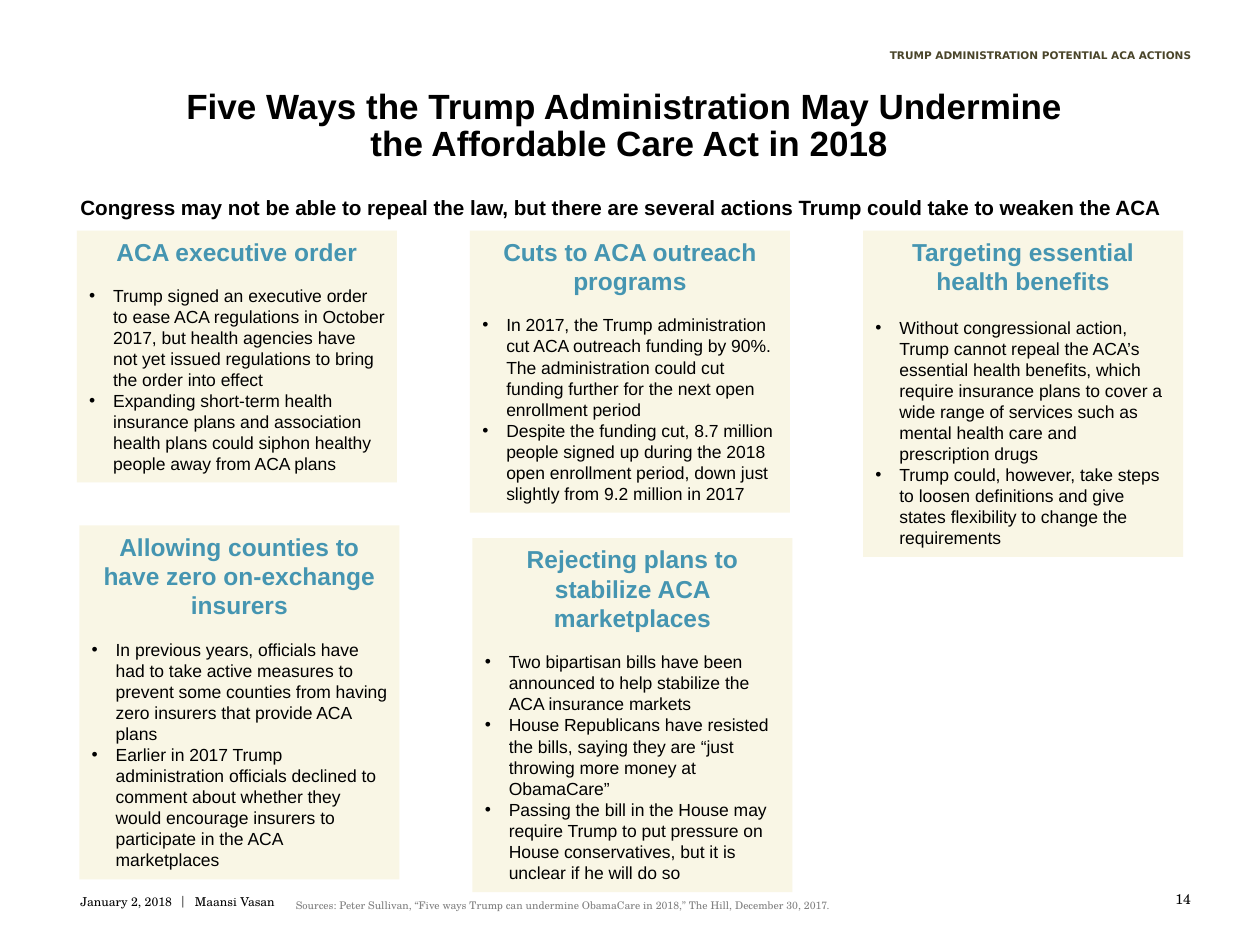
from pptx import Presentation
from pptx.util import Inches, Pt
from pptx.dml.color import RGBColor
from pptx.enum.shapes import MSO_SHAPE
from pptx.enum.text import MSO_ANCHOR, PP_ALIGN
from lxml.etree import SubElement
from pptx.oxml.ns import qn

SANS, SERIF, LABEL = "Arial", "TeX Gyre Schola", "DejaVu Sans"
BLACK, TEAL, CREAM = "000000", "4595B1", "F9F6E5"
CARD_WIDTH, INDENT = 2.54, 0.19

TITLE = "Five Ways the Trump Administration May Undermine \vthe Affordable Care Act in 2018"
SUBTITLE = ("Congress may not be able to repeal the law, but there are several actions "
            "Trump could take to weaken the ACA")
SECTION = "TRUMP ADMINISTRATION POTENTIAL ACA ACTIONS"
SOURCE = ("Sources: Peter Sullivan, “Five ways Trump can undermine ObamaCare in 2018,” "
          "The Hill, December 30, 2017.")

CARDS = [
    (0.61, 1.83, 2.0, 10.8, "ACA executive order", [
        "Trump signed an executive order to ease ACA regulations in October 2017, but health "
        "agencies have not yet issued regulations to bring the order into effect",
        "Expanding short-term health insurance plans and association health plans could siphon "
        "healthy people away from ACA plans"]),
    (3.73, 1.83, 2.24, 10.8, "Cuts to ACA outreach programs", [
        "In 2017, the Trump administration cut ACA outreach funding by 90%. The administration "
        "could cut funding further for the next open enrollment period",
        "Despite the funding cut, 8.7 million people signed up during the 2018 open enrollment "
        "period, down just slightly from 9.2 million in 2017"]),
    (6.85, 1.83, 2.59, 12, "Targeting essential health benefits", [
        "Without congressional action, Trump cannot repeal the ACA’s essential health benefits, "
        "which require insurance plans to cover a wide range of services such as mental health "
        "care and prescription drugs",
        "Trump could, however, take steps to loosen definitions and give states flexibility to "
        "change the requirements"]),
    (0.63, 4.17, 2.81, 10.8, "Allowing counties to have zero on-exchange insurers", [
        "In previous years, officials have had to take active measures to prevent some counties "
        "from having zero insurers that provide ACA plans",
        "Earlier in 2017 Trump administration officials declined to comment about whether they "
        "would encourage insurers to participate in the ACA marketplaces"]),
    (3.75, 4.27, 2.81, 10.8, "Rejecting plans to stabilize ACA marketplaces", [
        "Two bipartisan bills have been announced to help stabilize the ACA insurance markets",
        "House Republicans have resisted the bills, saying they are “just throwing more money "
        "at ObamaCare”",
        "Passing the bill in the House may require Trump to put pressure on House conservatives, "
        "but it is unclear if he will do so"]),
]


def color(value):
    return RGBColor.from_string(value)


def style(font, size, name, value, bold=False):
    font.size = Pt(size)
    font.name = name
    font.bold = bold
    font.color.rgb = color(value)


def add_span(para, text, size, name, value, bold=False):
    span = para.add_run()
    span.text = text
    style(span.font, size, name, value, bold)


def add_text(page, place, spans, align=PP_ALIGN.LEFT, spacing=None, wrap=True):
    box = page.shapes.add_textbox(*map(Inches, place))
    box.text_frame.word_wrap = wrap
    para = box.text_frame.paragraphs[0]
    para.alignment = align
    para.line_spacing = spacing
    for span in spans:
        add_span(para, *span)


def add_bullet(frame, text):
    para = frame.add_paragraph()
    para.text = text
    para.alignment = PP_ALIGN.LEFT
    properties = para._p.get_or_add_pPr()
    properties.set("marL", str(Inches(INDENT)))
    properties.set("indent", str(-Inches(INDENT)))
    SubElement(properties, qn("a:buFont"), typeface=SANS)
    SubElement(properties, qn("a:buChar"), char="•")
    style(para.runs[0].font, 10, SANS, BLACK)


def add_card(page, left, top, height, gap, heading, bullets):
    card = page.shapes.add_shape(
        MSO_SHAPE.RECTANGLE, *map(Inches, (left, top, CARD_WIDTH, height)))
    card.shadow.inherit = False
    card.fill.solid()
    card.fill.fore_color.rgb = color(CREAM)
    card.line.fill.background()
    frame = card.text_frame
    frame.word_wrap = True
    frame.vertical_anchor = MSO_ANCHOR.TOP
    para = frame.paragraphs[0]
    para.alignment = PP_ALIGN.CENTER
    para.space_after = Pt(gap)
    add_span(para, heading, 14, SANS, TEAL, True)
    for bullet in bullets:
        add_bullet(frame, bullet)


def add_title(page):
    title = page.shapes.title
    title.left, title.top, title.width, title.height = map(Inches, (0.53, 0.67, 8.93, 0.67))
    frame = title.text_frame
    frame.text = TITLE
    frame.word_wrap = True
    frame.vertical_anchor = MSO_ANCHOR.MIDDLE
    para = frame.paragraphs[0]
    para.alignment = PP_ALIGN.CENTER
    para.line_spacing = 0.9
    for span in para.runs:
        style(span.font, 20, SANS, BLACK, True)


def main():
    deck = Presentation()
    deck.slide_width, deck.slide_height = Inches(10), Inches(7.5)
    page = deck.slides.add_slide(deck.slide_layouts[5])
    add_title(page)
    add_text(page, (6.86, 0.34, 2.69, 0.2), [(SECTION, 6, LABEL, "4A452A", True)],
             PP_ALIGN.RIGHT, wrap=False)
    add_text(page, (0.54, 1.5, 8.93, 0.3), [(SUBTITLE, 11.8, SANS, BLACK, True)])
    for card in CARDS:
        add_card(page, *card)
    add_text(page, (0.54, 7.02, 1.8, 0.37), [
        ("January 2, 2018  ", 7, SERIF, BLACK),
        ("|  ", 8, SERIF, "595959"),
        ("Maansi Vasan", 7, SERIF, BLACK)], spacing=1.1)
    add_text(page, (2.25, 7.08, 6, 0.17), [(SOURCE, 6, SERIF, "808080")], spacing=1.1)
    add_text(page, (7.22, 7.02, 2.33, 0.4), [("14", 8, SERIF, BLACK)], PP_ALIGN.RIGHT)
    deck.save("out.pptx")


if __name__ == "__main__":
    main()
